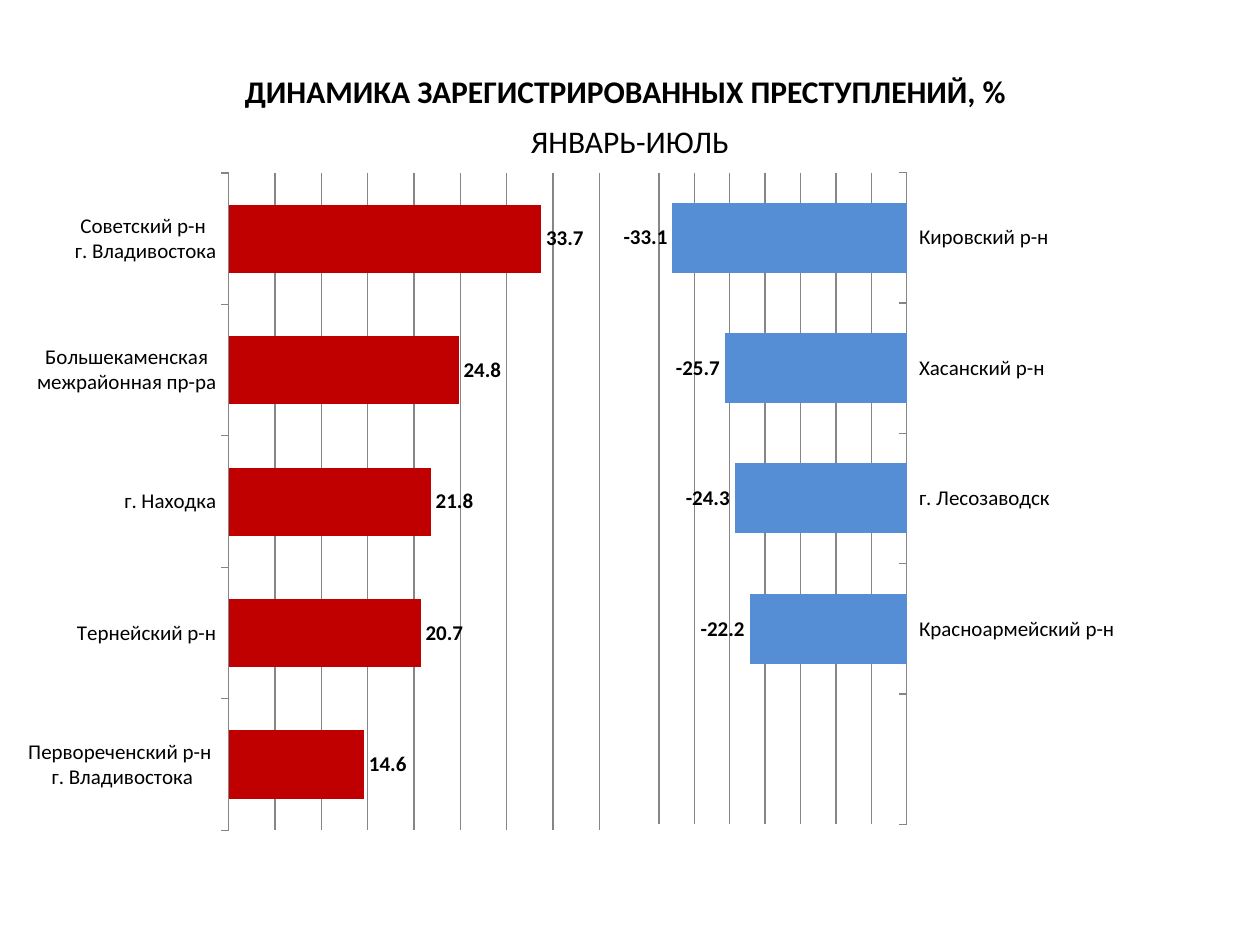
import pptx
import pptx.chart.data
import pptx.dml.color
import pptx.enum.chart
import pptx.enum.text
import pptx.oxml
import pptx.oxml.ns
import pptx.util

Pt = pptx.util.Pt


def color(hex_string):
    return pptx.dml.color.RGBColor.from_string(hex_string)


class SlideBuilder:
    font_name = "Calibri"
    text_color = "000000"
    line_color = "868686"
    title_size = 18
    label_size = 12

    def __init__(self, slide):
        self.slide = slide

    def style_font(self, font, size, bold=False):
        font.name = self.font_name
        font.size = Pt(size)
        font.bold = bold
        font.color.rgb = color(self.text_color)

    def heading(self, text, left, top, width, height, bold=False):
        shape = self.slide.shapes.add_textbox(Pt(left), Pt(top), Pt(width), Pt(height))
        frame = shape.text_frame
        frame.word_wrap = False
        frame.auto_size = pptx.enum.text.MSO_AUTO_SIZE.SHAPE_TO_FIT_TEXT
        paragraph = frame.paragraphs[0]
        paragraph.text = text
        paragraph.alignment = pptx.enum.text.PP_ALIGN.CENTER
        self.style_font(paragraph.font, self.title_size, bold)

    def bar_chart(self, box, plot_area, rows, fill, scale, gap, overlap=0,
                  number_format="General", labels_right=False):
        """Add a bar chart; rows run from bottom to top, scale is (minimum, maximum)."""
        data = pptx.chart.data.CategoryChartData(number_format=number_format)
        data.categories = [name for name, value in rows]
        data.add_series("Series 1", [value for name, value in rows])
        chart = self.slide.shapes.add_chart(
            pptx.enum.chart.XL_CHART_TYPE.BAR_CLUSTERED, *map(Pt, box), data).chart
        chart.has_legend = False
        chart.has_title = False
        self.style_font(chart.font, self.title_size)
        self.place_plot(chart, plot_area)

        category_axis = chart.category_axis
        self.style_font(category_axis.tick_labels.font, self.label_size)
        category_axis.format.line.color.rgb = color(self.line_color)
        category_axis.major_tick_mark = pptx.enum.chart.XL_TICK_MARK.OUTSIDE
        if labels_right:
            category_axis.tick_label_position = pptx.enum.chart.XL_TICK_LABEL_POSITION.HIGH

        value_axis = chart.value_axis
        value_axis.visible = False
        value_axis.minimum_scale, value_axis.maximum_scale = scale
        value_axis.major_unit = 5
        value_axis.has_major_gridlines = True
        value_axis.major_gridlines.format.line.color.rgb = color(self.line_color)

        plot = chart.plots[0]
        plot.gap_width = gap
        plot.overlap = overlap
        plot.vary_by_categories = False
        series = plot.series[0]
        series.invert_if_negative = False
        series.format.fill.solid()
        series.format.fill.fore_color.rgb = color(fill)

        labels = series.data_labels
        labels.show_value = True
        labels.position = pptx.enum.chart.XL_LABEL_POSITION.OUTSIDE_END
        labels.number_format = number_format
        labels.number_format_is_linked = False
        self.style_font(labels.font, self.label_size, bold=True)

    def place_plot(self, chart, plot_area):
        """Fix the inner plot area, given as fractions of the chart."""
        qn = pptx.oxml.ns.qn
        element = chart.element.find(".//" + qn("c:plotArea"))
        for layout in element.findall(qn("c:layout")):
            element.remove(layout)
        settings = [("layoutTarget", "inner"), ("xMode", "edge"), ("yMode", "edge")]
        settings += zip("xywh", plot_area)
        items = "".join(f'<c:{name} val="{value}"/>' for name, value in settings)
        element.insert(0, pptx.oxml.parse_xml(
            f"<c:layout {pptx.oxml.ns.nsdecls('c')}>"
            f"<c:manualLayout>{items}</c:manualLayout></c:layout>"))


FALLING = [
    ("", None),
    ("Красноармейский р-н", -22.2),
    ("г. Лесозаводск", -24.3),
    ("Хасанский р-н", -25.7),
    ("Кировский р-н", -33.1),
]
RISING = [
    ("Первореченский р-н \nг. Владивостока", 14.6),
    ("Тернейский р-н", 20.7),
    ("г. Находка", 21.8),
    ("Большекаменская межрайонная пр-ра", 24.8),
    ("Советский р-н \nг. Владивостока", 33.7),
]


def main():
    presentation = pptx.Presentation()
    presentation.slide_width = Pt(720)
    presentation.slide_height = Pt(540)
    slide = presentation.slides.add_slide(presentation.slide_layouts[6])
    builder = SlideBuilder(slide)

    builder.heading("ДИНАМИКА ЗАРЕГИСТРИРОВАННЫХ ПРЕСТУПЛЕНИЙ, %",
                    130.3, 37.5, 454.3, 29, bold=True)
    builder.bar_chart((348.5, 85.7, 360, 391.7), (0.078, 0.033, 0.393, 0.951),
                      FALLING, "558ED5", (-35, 0), gap=86, labels_right=True)
    builder.heading("ЯНВАРЬ-ИЮЛЬ", 295.2, 66.2, 129.6, 29)
    builder.bar_chart((0, 85.7, 393.8, 399.6), (0.332, 0.033, 0.538, 0.94),
                      RISING, "C00000", (0, 40), gap=93, overlap=-49,
                      number_format="0.0")
    presentation.save("out.pptx")


if __name__ == "__main__":
    main()
